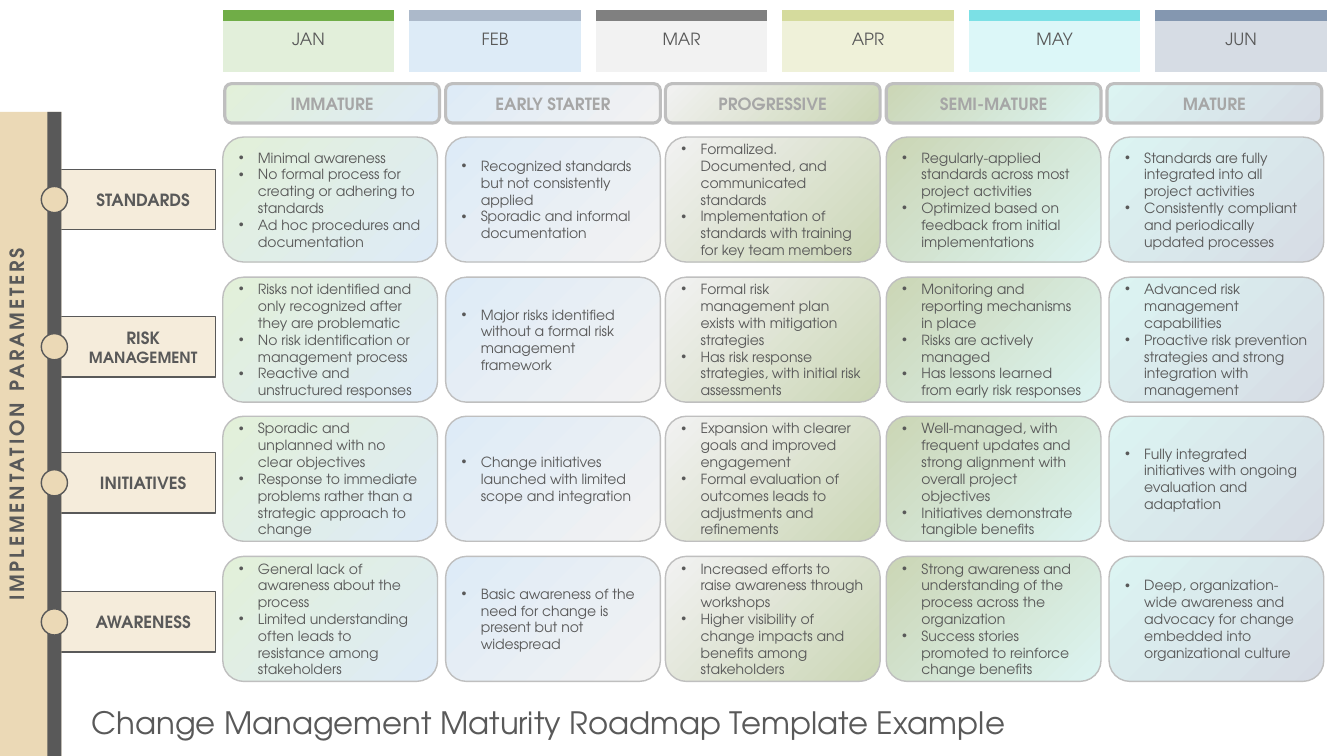
from dataclasses import dataclass

from pptx import Presentation
from pptx.dml.color import RGBColor
from pptx.enum.shapes import MSO_SHAPE
from pptx.enum.text import MSO_ANCHOR, PP_ALIGN
from pptx.oxml.ns import qn
from pptx.oxml.xmlchemy import OxmlElement
from pptx.util import Pt

RECT, ROUND, OVAL = MSO_SHAPE.RECTANGLE, MSO_SHAPE.ROUNDED_RECTANGLE, MSO_SHAPE.OVAL
LEFT, CENTER = PP_ALIGN.LEFT, PP_ALIGN.CENTER
TOP, MIDDLE = MSO_ANCHOR.TOP, MSO_ANCHOR.MIDDLE

TITLE = "Change Management Maturity Roadmap Template Example"
SIDE_TITLE = "IMPLEMENTATION PARAMETERS"
MONTHS = [
    ("JAN", "70AD47", "E2EFDA"),
    ("FEB", "ACB9CA", "DDEBF7"),
    ("MAR", "808080", "F2F2F2"),
    ("APR", "D5DB9D", "EFF1D9"),
    ("MAY", "7BE0E5", "DCF7F8"),
    ("JUN", "8497B0", "D6DCE4"),
]
STAGES = ["IMMATURE", "EARLY STARTER", "PROGRESSIVE", "SEMI-MATURE", "MATURE"]
PARAMETERS = [
    ([("STANDARDS", 12)], [
        ["Minimal awareness",
         "No formal process for creating or adhering to standards",
         "Ad hoc procedures and documentation"],
        ["Recognized standards but not consistently applied",
         "Sporadic and informal documentation"],
        ["Formalized. Documented, and communicated standards",
         "Implementation of standards with training for key team members"],
        ["Regularly-applied standards across most project activities",
         "Optimized based on feedback from initial implementations"],
        ["Standards are fully integrated into all project activities",
         "Consistently compliant and periodically updated processes"],
    ]),
    ([("RISK ", 12), ("MANAGEMENT", 11)], [
        ["Risks not identified and only recognized after they are problematic",
         "No risk identification or management process",
         "Reactive and unstructured responses"],
        ["Major risks identified without a formal risk management framework"],
        ["Formal risk management plan exists with mitigation strategies",
         "Has risk response strategies, with initial risk assessments"],
        ["Monitoring and reporting mechanisms in place",
         "Risks are actively managed",
         "Has lessons learned from early risk responses"],
        ["Advanced risk management capabilities",
         "Proactive risk prevention strategies and strong integration with management"],
    ]),
    ([("INITIATIVES", 12)], [
        ["Sporadic and unplanned with no clear objectives",
         "Response to immediate problems rather than a strategic approach to change"],
        ["Change initiatives launched with limited scope and integration"],
        ["Expansion with clearer goals and improved engagement",
         "Formal evaluation of outcomes leads to adjustments and refinements"],
        ["Well-managed, with frequent updates and strong alignment with overall project objectives",
         "Initiatives demonstrate tangible benefits"],
        ["Fully integrated initiatives with ongoing evaluation and adaptation"],
    ]),
    ([("AWARENESS", 12)], [
        ["General lack of awareness about the process",
         "Limited understanding often leads to resistance among stakeholders"],
        ["Basic awareness of the need for change is present but not widespread"],
        ["Increased efforts to raise awareness through workshops",
         "Higher visibility of change impacts and benefits among stakeholders"],
        ["Strong awareness and understanding of the process across the organization",
         "Success stories promoted to reinforce change benefits"],
        ["Deep, organization-wide awareness and advocacy for change embedded into organizational culture"],
    ]),
]


@dataclass(frozen=True)
class Theme:
    font: str = "TeX Gyre Adventor"
    ink: str = "595959"
    muted: str = "A6A6A6"
    edge: str = "BFBFBF"
    sand: str = "EBD9B6"
    tag: str = "F5ECDB"
    ramp: tuple = ("E2F0D9", "DEEBF7", "F2F2F2", "CBD6B5", "DCF4F2", "D6DCE5")
    title: int = 22
    side: int = 14
    label: int = 12
    body: int = 10
    empty: int = 1


T = Theme()
PX = 9144
STAGE_X = [223, 442, 660, 879, 1098]
CARD_X = [221, 442, 660, 879, 1100]
CARD_W, CARD_H = 213, 124
STAGE_Y, STAGE_H = 83, 39
CARD_TOP, CARD_SPAN = 136, 416
TAG_MID = [198, 344, 479, 617]
MONTH_COLS = [15, 140, 15]
MONTH_ROWS = [11, 39, 11]
GAP = 15


def rgb(value):
    return RGBColor.from_string(value)


def add_run(p, text, size, color=T.ink, bold=False):
    r = p.add_run()
    r.text = text
    r.font.name, r.font.size, r.font.bold = T.font, Pt(size), bold
    r.font.color.rgb = rgb(color)
    return r


def add_shape(s, kind, box, fill, line=None, width=1):
    sp = s.shapes.add_shape(kind, *(v * PX for v in box))
    sp.shadow.inherit = False
    if isinstance(fill, tuple):
        sp.fill.gradient()
        sp.fill.gradient_angle = 315
        for stop, color in zip(sp.fill.gradient_stops, fill):
            stop.color.rgb = rgb(color)
    else:
        sp.fill.solid()
        sp.fill.fore_color.rgb = rgb(fill)
    if line:
        sp.line.color.rgb = rgb(line)
        sp.line.width = Pt(width)
    else:
        sp.line.fill.background()
    tf = sp.text_frame
    tf.word_wrap, tf.vertical_anchor = True, MIDDLE
    return tf


def add_text(s, box, runs, align=CENTER, bold=True, anchor=TOP):
    sp = s.shapes.add_textbox(*(v * PX for v in box))
    tf = sp.text_frame
    tf.word_wrap, tf.vertical_anchor = True, anchor
    p = tf.paragraphs[0]
    p.alignment = align
    for text, size in runs:
        add_run(p, text, size, bold=bold)
    return sp


def add_bullets(tf, items):
    for i, item in enumerate(items):
        p = tf.add_paragraph() if i else tf.paragraphs[0]
        p.alignment = LEFT
        ppr = p._p.get_or_add_pPr()
        ppr.set("marL", str(19 * PX))
        ppr.set("indent", str(-19 * PX))
        for tag, key, value in (("a:buFont", "typeface", "Arial"), ("a:buChar", "char", "•")):
            bullet = OxmlElement(tag)
            bullet.set(key, value)
            ppr.append(bullet)
        add_run(p, item, T.body)


def add_months(s):
    widths = (MONTH_COLS + [GAP]) * len(MONTHS)
    widths.pop()
    box = (221, 10, sum(widths), sum(MONTH_ROWS))
    table = s.shapes.add_table(len(MONTH_ROWS), len(widths), *(v * PX for v in box)).table
    table.first_row = table.horz_banding = False
    style = table._tbl.tblPr.find(qn("a:tableStyleId"))
    style.text = "{2D5ABB26-0587-4C30-8999-92F81FD0307C}"
    for col, w in zip(table.columns, widths):
        col.width = w * PX
    for row, h in zip(table.rows, MONTH_ROWS):
        row.height = h * PX
    for y in range(len(MONTH_ROWS)):
        for x in range(len(widths)):
            month, part = divmod(x, 4)
            name, strong, pale = MONTHS[month]
            cell = table.cell(y, x)
            cell.margin_left = cell.margin_right = cell.margin_top = cell.margin_bottom = 0
            cell.vertical_anchor = MIDDLE
            p = cell.text_frame.paragraphs[0]
            if part == 3:
                cell.fill.background()
            else:
                cell.fill.solid()
                cell.fill.fore_color.rgb = rgb(pale if y else strong)
            if (y, part) == (1, 1):
                p.alignment = CENTER
                add_run(p, name, T.label)
            else:
                p._p.get_or_add_endParaRPr().set("sz", str(T.empty * 100))


def main():
    prs = Presentation()
    prs.slide_width, prs.slide_height = 1333 * PX, 750 * PX
    s = prs.slides.add_slide(prs.slide_layouts[6])

    for mid in TAG_MID:
        add_shape(s, RECT, (44, mid - 30, 170, 60), T.tag, T.ink)
    add_shape(s, RECT, (0, 111, 61, 639), T.sand)
    add_shape(s, RECT, (47, 111, 14, 639), T.ink)

    fades = list(zip(T.ramp, T.ramp[1:]))
    for stage, x, fade in zip(STAGES, STAGE_X, fades):
        tf = add_shape(s, ROUND, (x, STAGE_Y, CARD_W, STAGE_H), fade, T.edge, 2.25)
        p = tf.paragraphs[0]
        p.alignment = CENTER
        add_run(p, stage, T.label, T.muted, True)

    for i, (label, cards) in enumerate(PARAMETERS):
        y = CARD_TOP + round(i * CARD_SPAN / (len(PARAMETERS) - 1))
        for items, x, fade in zip(cards, CARD_X, fades):
            add_bullets(add_shape(s, ROUND, (x, y, CARD_W, CARD_H), fade, T.edge), items)
        h = 30 if len(label) == 1 else 49
        add_text(s, (78, TAG_MID[i] - h // 2, 128, h), label, anchor=MIDDLE)
        add_shape(s, OVAL, (41, TAG_MID[i] - 13, 26, 26), T.sand, T.ink)

    side = add_text(s, (-301, 404, 636, 34), [(SIDE_TITLE, T.side)])
    side.rotation = 270
    side.text_frame.paragraphs[0].runs[0].font._element.set("spc", "200")
    add_months(s)
    add_text(s, (81, 693, 1064, 47), [(TITLE, T.title)], LEFT, False)
    prs.save("out.pptx")


if __name__ == "__main__":
    main()
